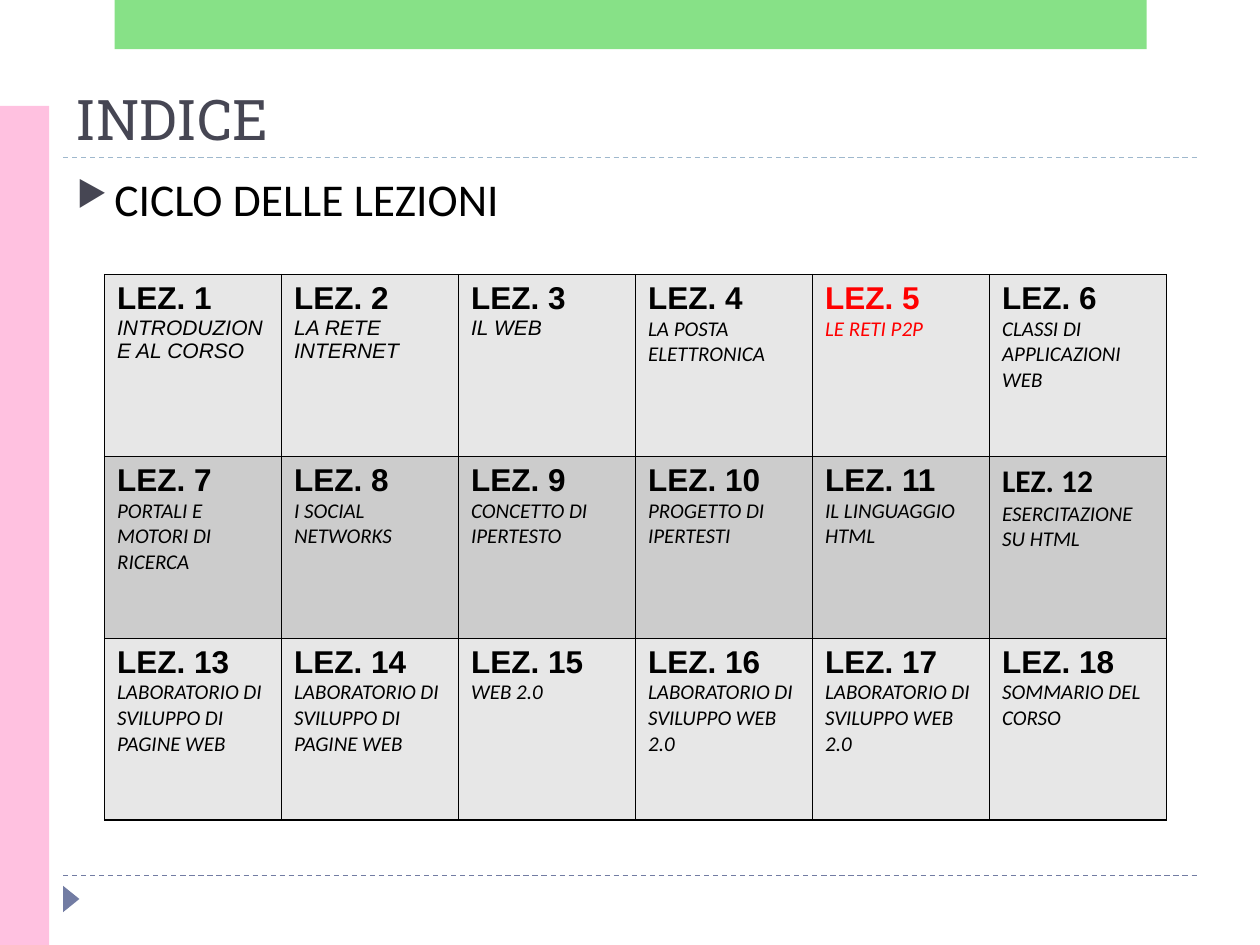
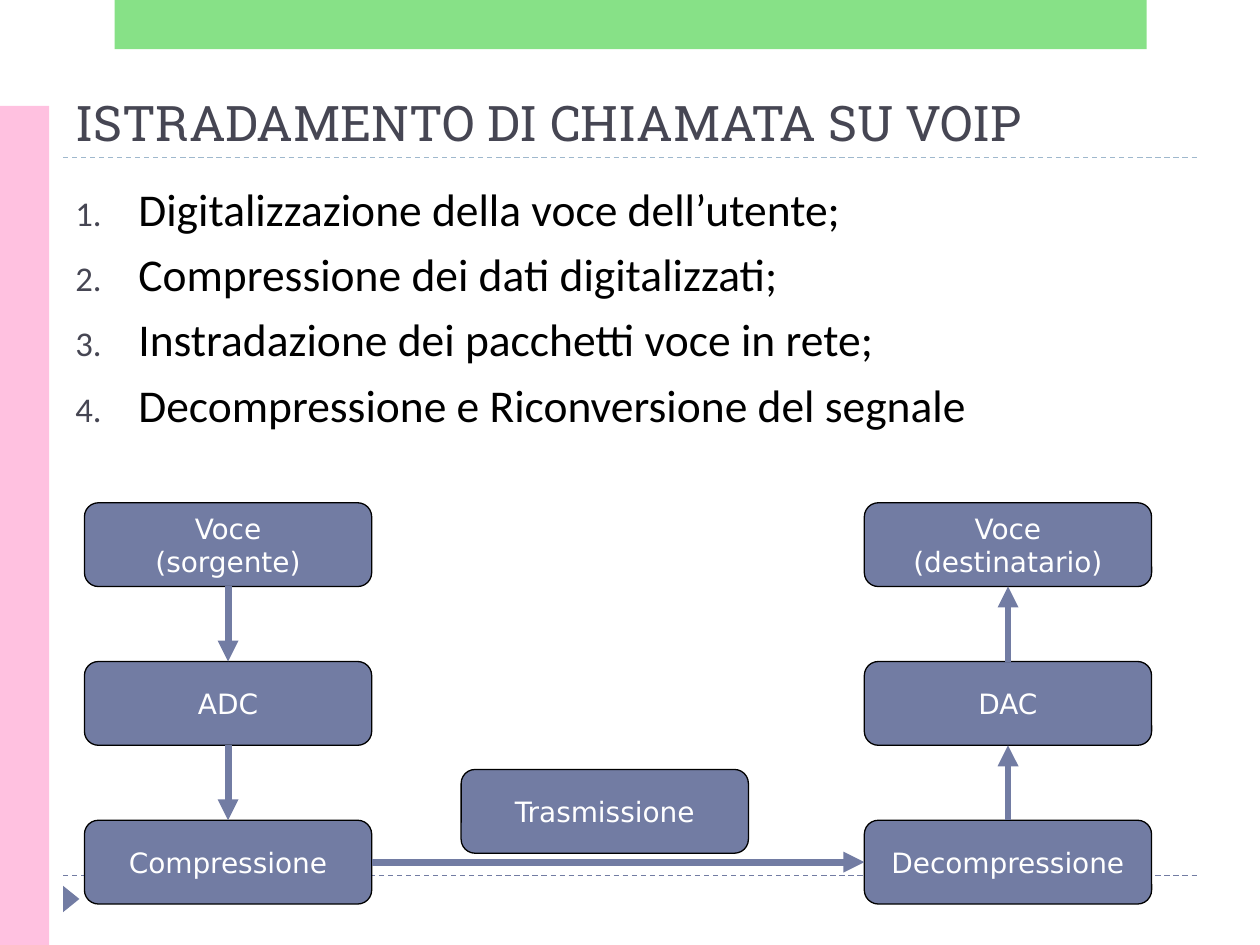
"""Build two lesson slides: the course index and the VoIP call routing diagram."""
from typing import NamedTuple

from lxml.etree import SubElement
from pptx import Presentation
from pptx.dml.color import RGBColor
from pptx.enum.dml import MSO_LINE
from pptx.enum.shapes import MSO_CONNECTOR, MSO_SHAPE
from pptx.enum.text import MSO_ANCHOR, PP_ALIGN
from pptx.oxml.ns import qn
from pptx.shapes.autoshape import Shape
from pptx.shapes.connector import Connector
from pptx.slide import Slide
from pptx.table import _Cell
from pptx.text.text import TextFrame, _Paragraph
from pptx.util import Inches, Pt

COLS, ROWS = 100, 75
UNIT = Inches(0.1)

BLACK, WHITE, RED = "000000", "FFFFFF", "FF0000"
SLATE, INK, MIST = "727CA3", "464653", "9FB8CD"
PINK, GREEN = "FFC1E0", "62D862"
ROW_FILLS = ("E7E7E7", "CCCCCC")
SERIF, SANS, BODY, LABEL = "Roboto Slab", "Arial", "Calibri", "DejaVu Sans"


class Area(NamedTuple):
    col: float
    row: float
    cols: float
    rows: float

    def emu(self) -> list[int]:
        return [round(n * UNIT) for n in self]


class Decor(NamedTuple):
    area: Area
    kind: MSO_SHAPE
    fill: str
    rotation: int = 0
    opacity: int = 100


class Lesson(NamedTuple):
    topic: str
    topic_font: str = BODY
    head_font: str = SANS
    color: str = BLACK


class Step(NamedTuple):
    label: str
    col: float
    row: float


class Link(NamedTuple):
    start: str
    start_site: int
    end: str
    end_site: int


DECOR = (
    Decor(Area(4.6, 70.7, 2.1, 1.3), MSO_SHAPE.ISOSCELES_TRIANGLE, SLATE, rotation=90),
    Decor(Area(0, 8.4, 3.9, 66.6), MSO_SHAPE.RECTANGLE, PINK),
    Decor(Area(9.1, 0, 81.9, 3.9), MSO_SHAPE.RECTANGLE, GREEN, opacity=76),
)
RULES = ((69.5, SLATE), (12.5, MIST))
TITLE = Area(5, 5.5, 90, 7)

LESSONS = (
    Lesson("INTRODUZIONE AL CORSO", SANS),
    Lesson("LA RETE INTERNET", SANS),
    Lesson("IL WEB", SANS),
    Lesson("LA POSTA ELETTRONICA"),
    Lesson("LE RETI P2P", color=RED),
    Lesson("CLASSI DI APPLICAZIONI WEB"),
    Lesson("PORTALI E MOTORI DI RICERCA"),
    Lesson("I SOCIAL NETWORKS"),
    Lesson("CONCETTO DI IPERTESTO"),
    Lesson("PROGETTO DI IPERTESTI"),
    Lesson("IL LINGUAGGIO HTML"),
    Lesson("ESERCITAZIONE SU HTML", head_font=BODY),
    Lesson("LABORATORIO DI SVILUPPO DI PAGINE WEB"),
    Lesson("LABORATORIO DI SVILUPPO DI PAGINE WEB"),
    Lesson("WEB 2.0"),
    Lesson("LABORATORIO DI SVILUPPO WEB 2.0"),
    Lesson("LABORATORIO DI SVILUPPO WEB 2.0"),
    Lesson("SOMMARIO DEL CORSO"),
)
LESSONS_PER_ROW = 6
LESSON_TABLE = Area(8.3, 21.8, 84.3, 43.3)

PHASES = (
    "Digitalizzazione della voce dell’utente;",
    "Compressione dei dati digitalizzati;",
    "Instradazione dei pacchetti voce in rete;",
    "Decompressione e Riconversione del segnale",
)
SENDER, RECEIVER = 6.7, 68.6
STEP_TOP, STEP_PITCH = 39.9, 12.6
STEP_COLS, STEP_ROWS = 22.8, 6.65
TOP, LEFT, BOTTOM, RIGHT = range(4)
STEPS = {
    "source": Step("Voce\n(sorgente)", SENDER, 0),
    "adc": Step("ADC", SENDER, 1),
    "pack": Step("Compressione", SENDER, 2),
    "unpack": Step("Decompressione", RECEIVER, 2),
    "dac": Step("DAC", RECEIVER, 1),
    "target": Step("Voce\n(destinatario)", RECEIVER, 0),
}
TRANSMISSION = Step("Trasmissione", 36.6, 1.68)
LINKS = (
    Link("source", BOTTOM, "adc", TOP),
    Link("adc", BOTTOM, "pack", TOP),
    Link("pack", RIGHT, "unpack", LEFT),
    Link("unpack", TOP, "dac", BOTTOM),
    Link("dac", TOP, "target", BOTTOM),
)


def rgb(color: str) -> RGBColor:
    return RGBColor.from_string(color)


def write(tf: TextFrame, text: str, *, size: float, font: str, color: str = BLACK,
          bold: bool = False, italic: bool = False, align: PP_ALIGN = PP_ALIGN.LEFT,
          before: float = 0, append: bool = False) -> list[_Paragraph]:
    paragraphs = []
    for i, line in enumerate(text.split("\n")):
        p = tf.add_paragraph() if append or i else tf.paragraphs[0]
        p.alignment = align
        if append or i:
            p.space_before = Pt(before)
        r = p.add_run()
        r.text = line
        r.font.size, r.font.name = Pt(size), font
        r.font.bold, r.font.italic = bold, italic
        r.font.color.rgb = rgb(color)
        paragraphs.append(p)
    return paragraphs


def add_bullet(p: _Paragraph, indent: float, tag: str, **mark: str) -> None:
    pPr = p._p.get_or_add_pPr()
    pPr.set("marL", str(Inches(indent)))
    pPr.set("indent", str(-Inches(indent)))
    SubElement(SubElement(pPr, qn("a:buClr")), qn("a:srgbClr"), val=INK)
    SubElement(pPr, qn("a:buSzPct"), val="76000")
    SubElement(pPr, qn(tag), **mark)


def add_text(s: Slide, area: Area, anchor: MSO_ANCHOR = MSO_ANCHOR.TOP) -> TextFrame:
    tf = s.shapes.add_textbox(*area.emu()).text_frame
    tf.word_wrap = True
    tf.vertical_anchor = anchor
    return tf


def add_filled(s: Slide, kind: MSO_SHAPE, area: Area, fill: str) -> Shape:
    sp = s.shapes.add_shape(kind, *area.emu())
    sp.shadow.inherit = False
    sp.fill.solid()
    sp.fill.fore_color.rgb = rgb(fill)
    sp.line.fill.background()
    return sp


def add_line(s: Slide, color: str, width: float, row: float = 0) -> Connector:
    ends = (round(n * UNIT) for n in (5, row, 95, row))
    line = s.shapes.add_connector(MSO_CONNECTOR.STRAIGHT, *ends)
    line.line.color.rgb = rgb(color)
    line.line.width = Pt(width)
    SubElement(line._element.spPr, qn("a:effectLst"))
    return line


def add_slide(prs: Presentation, title: str, size: float) -> Slide:
    s = prs.slides.add_slide(prs.slide_layouts[6])
    for row, color in RULES:
        add_line(s, color, 0.75, row).line.dash_style = MSO_LINE.DASH
    for decor in DECOR:
        sp = add_filled(s, decor.kind, decor.area, decor.fill)
        sp.rotation = decor.rotation
        if decor.opacity < 100:
            clr = sp._element.spPr.find(qn("a:solidFill")).find(qn("a:srgbClr"))
            SubElement(clr, qn("a:alpha"), val=str(decor.opacity * 1000))
    write(add_text(s, TITLE, MSO_ANCHOR.BOTTOM), title, size=size, font=SERIF, color=INK)
    return s


def style_cell(cell: _Cell, fill: str) -> None:
    tcPr = cell._tc.get_or_add_tcPr()
    for side in ("lnL", "lnR", "lnT", "lnB"):
        ln = SubElement(tcPr, qn(f"a:{side}"), w=str(Pt(1)))
        SubElement(SubElement(ln, qn("a:solidFill")), qn("a:srgbClr"), val=BLACK)
    cell.fill.solid()
    cell.fill.fore_color.rgb = rgb(fill)


def add_lessons(s: Slide) -> None:
    rows = len(LESSONS) // LESSONS_PER_ROW
    table = s.shapes.add_table(rows, LESSONS_PER_ROW, *LESSON_TABLE.emu()).table
    table.first_row = table.horz_banding = False
    for i, lesson in enumerate(LESSONS):
        row, col = divmod(i, LESSONS_PER_ROW)
        cell = table.cell(row, col)
        style_cell(cell, ROW_FILLS[row % 2])
        write(cell.text_frame, f"LEZ. {i + 1}", size=18, font=lesson.head_font,
              color=lesson.color, bold=True)
        write(cell.text_frame, lesson.topic, size=12, font=lesson.topic_font,
              color=lesson.color, italic=True, append=True)


def add_step(s: Slide, step: Step) -> Shape:
    area = Area(step.col, STEP_TOP + step.row * STEP_PITCH, STEP_COLS, STEP_ROWS)
    sp = add_filled(s, MSO_SHAPE.FLOWCHART_ALTERNATE_PROCESS, area, SLATE)
    sp.line.color.rgb = rgb(BLACK)
    sp.line.width = Pt(0.75)
    tf = sp.text_frame
    tf.word_wrap = True
    tf.vertical_anchor = MSO_ANCHOR.MIDDLE
    write(tf, step.label, size=16, font=LABEL, color=WHITE, align=PP_ALIGN.CENTER)
    return sp


def build_index(prs: Presentation) -> None:
    s = add_slide(prs, "INDICE", 32)
    tf = add_text(s, Area(5.1, 13.1, 90, 7.9))
    for p in write(tf, "CICLO DELLE LEZIONI", size=26, font=BODY):
        add_bullet(p, 0.3, "a:buChar", char="▶")
    add_lessons(s)


def build_routing(prs: Presentation) -> None:
    s = add_slide(prs, "ISTRADAMENTO DI CHIAMATA SU VOIP", 28)
    tf = add_text(s, Area(5, 13.9, 90, 55.3))
    for p in write(tf, "\n".join(PHASES), size=26, font=BODY, before=6):
        add_bullet(p, 0.5, "a:buAutoNum", type="arabicPeriod")
    nodes = {name: add_step(s, step) for name, step in STEPS.items()}
    for link in LINKS:
        arrow = add_line(s, SLATE, 4)
        arrow.begin_connect(nodes[link.start], link.start_site)
        arrow.end_connect(nodes[link.end], link.end_site)
        SubElement(arrow.line._get_or_add_ln(), qn("a:tailEnd"), type="triangle")
    add_step(s, TRANSMISSION)


def main() -> None:
    prs = Presentation()
    prs.slide_width, prs.slide_height = COLS * UNIT, ROWS * UNIT
    build_index(prs)
    build_routing(prs)
    prs.save("out.pptx")


if __name__ == "__main__":
    main()
